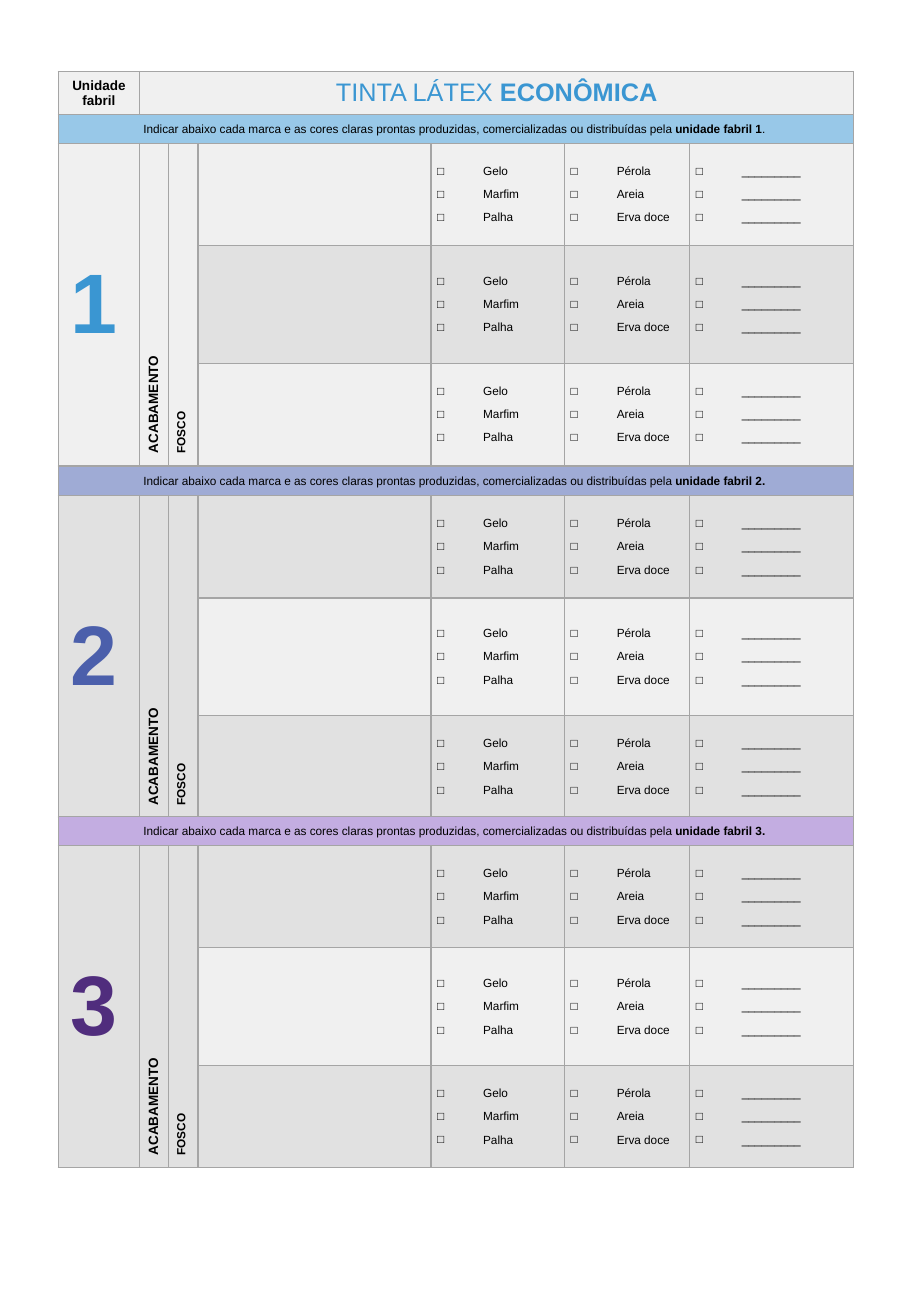
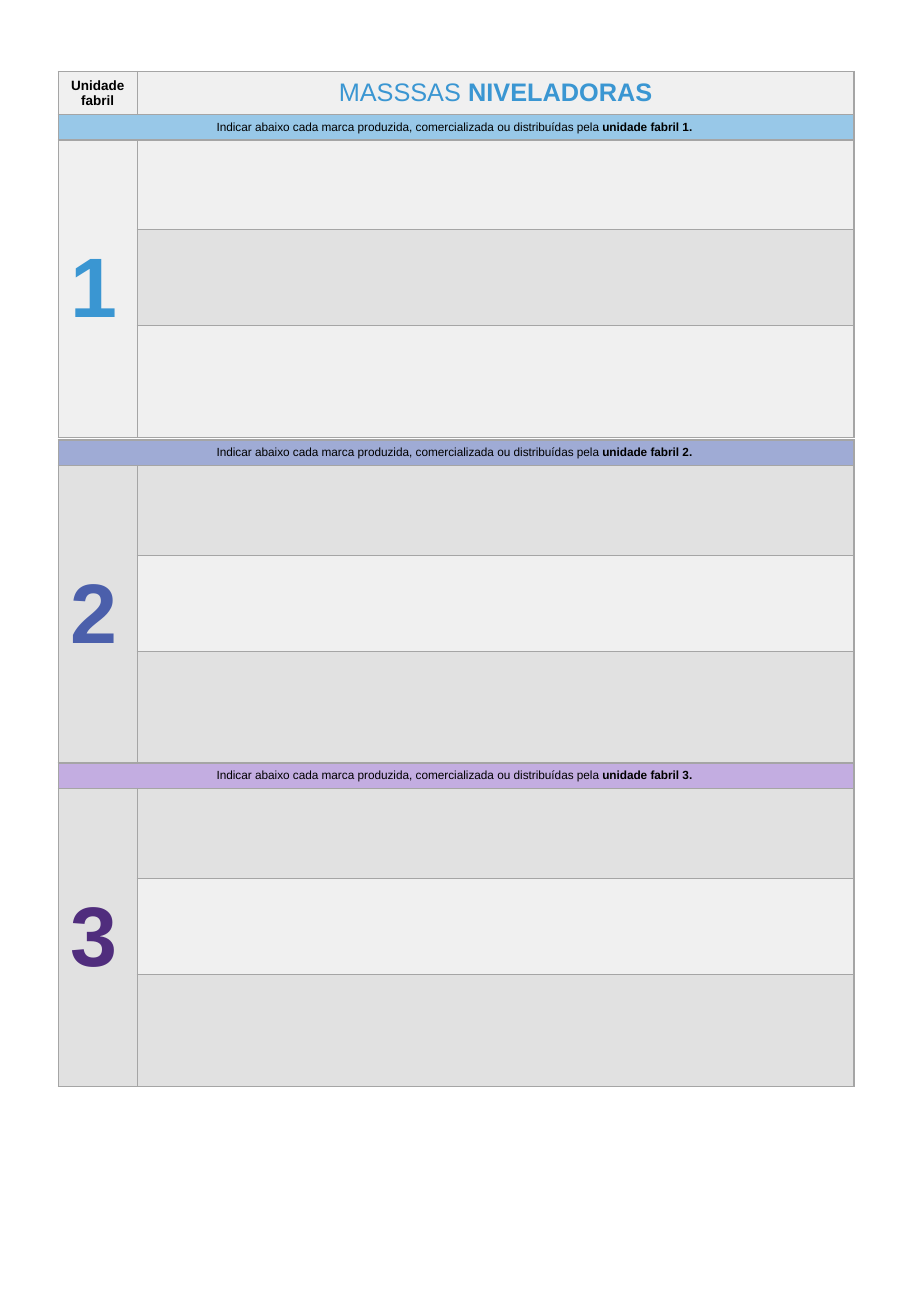
from lxml import etree
from pptx import Presentation
from pptx.dml.color import RGBColor
from pptx.enum.text import MSO_ANCHOR, PP_ALIGN
from pptx.oxml import parse_xml
from pptx.oxml.ns import nsdecls, qn
from pptx.util import Inches, Pt

MIDDLE, CENTER, LEFT = MSO_ANCHOR.MIDDLE, PP_ALIGN.CENTER, PP_ALIGN.LEFT

# Content
ASK_PAINT = ("Indicar abaixo cada marca e as cores claras prontas produzidas, "
             "comercializadas ou distribuídas pela ")
ASK_PUTTY = "Indicar abaixo cada marca produzida, comercializada ou distribuídas pela "
CORNER = "Unidade fabril"
SIDES = [("ACABAMENTO", "label"), ("FOSCO", "small")]
CHECKS = [("Gelo", "Marfim", "Palha"),
          ("Pérola", "Areia", "Erva doce"),
          ("_________",) * 3]

SHEETS = [
    {"title": ("TINTA LÁTEX ", "ECONÔMICA"), "ask": ASK_PAINT,
     "ends": [("unidade fabril 1", ". "), ("unidade fabril 2. ", ""),
              ("unidade fabril 3. ", "")],
     "sides": SIDES, "checks": CHECKS,
     "cols": [0.67, 0.23, 0.23, 1.92, 1.1, 1.03, 1.35],
     "head": 0.34, "rows": [0.24, 0.84, 0.97, 0.84], "tops": [0.59, 3.84, 6.72]},
    {"title": ("MASSSAS ", "NIVELADORAS"), "ask": ASK_PUTTY,
     "ends": [(f"unidade fabril {n}. ", "") for n in (1, 2, 3)],
     "sides": [], "checks": [], "cols": [0.65, 5.9],
     "head": 0.35, "rows": [0.21, 0.74, 0.79, 0.92], "tops": [0.59, 3.62, 6.28]},
]

# Theme
THEME = {
    "font": "Arial", "ink": "000000", "line": "A5A5A5", "edge": 1,
    "light": "F0F0F0", "dark": "E1E1E1",
    "size": {"title": 15, "label": 8, "small": 7, "number": 50},
    "units": [("98C8E8", "3A96D2"), ("9FABD5", "4B5FAB"), ("C3ADE1", "502D7D")],
}
TITLE_INK = THEME["units"][0][1]
LEFT_EDGE = 0.48


def write(par, text, size, bold=True, ink=THEME["ink"]):
    run = par.add_run()
    run.text = text
    look = {"name": THEME["font"], "size": Pt(THEME["size"][size]), "bold": bold}
    for key, value in look.items():
        setattr(run.font, key, value)
    run.font.color.rgb = RGBColor.from_string(ink)


def paint(cell, fill):
    """Give the cell its borders, fill and anchor."""
    props = cell._tc.get_or_add_tcPr()
    for side in ("lnL", "lnR", "lnT", "lnB"):
        props.append(parse_xml(
            f'<a:{side} {nsdecls("a")} w="{Pt(THEME["edge"])}"><a:solidFill>'
            f'<a:srgbClr val="{THEME["line"]}"/></a:solidFill></a:{side}>'))
    cell.fill.solid()
    cell.fill.fore_color.rgb = RGBColor.from_string(fill)
    cell.vertical_anchor = MIDDLE


def phrase(cell, parts, align=CENTER):
    par = cell.text_frame.paragraphs[0]
    par.alignment = align
    for part in parts:
        write(par, *part)


def tick(cell, names):
    """Fill the cell with a list of check boxes."""
    margins = {"margin_left": 0.05, "margin_right": 0.05,
               "margin_top": 0, "margin_bottom": 0}
    for key, value in margins.items():
        setattr(cell, key, Inches(value))
    frame = cell.text_frame
    for i, name in enumerate(names):
        par = frame.paragraphs[0] if i == 0 else frame.add_paragraph()
        props = par._p.get_or_add_pPr()
        props.set("marL", str(Inches(0.38)))
        props.set("indent", str(-Inches(0.38)))
        etree.SubElement(props, qn("a:buFont")).set("typeface", THEME["font"])
        etree.SubElement(props, qn("a:buChar")).set("char", "□")
        tabs = etree.SubElement(props, qn("a:tabLst"))
        for stop in (0.2, 0.49):
            tab = etree.SubElement(tabs, qn("a:tab"))
            tab.set("pos", str(Inches(stop)))
            tab.set("algn", "l")
        par.space_after = Pt(6)
        write(par, name, "small", False)


def build(slide, sheet, unit):
    """Add the table of one factory unit."""
    cols, sides = sheet["cols"], sheet["sides"]
    first = unit == 0
    rows = [sheet["head"]] * first + sheet["rows"]
    grid = slide.shapes.add_table(
        len(rows), len(cols), Inches(LEFT_EDGE), Inches(sheet["tops"][unit]),
        Inches(sum(cols)), Inches(sum(rows))).table
    grid.first_row = grid.horz_banding = False
    for col, wide in zip(grid.columns, cols):
        col.width = Inches(wide)
    for row, high in zip(grid.rows, rows):
        row.height = Inches(high)

    # Fills: the three entry rows alternate
    band, ink = THEME["units"][unit]
    tones = [THEME["light"], THEME["dark"]]
    if not first:
        tones.reverse()
    top, last = int(first), len(cols) - 1
    body, end = top + 1, len(rows) - 1
    fixed = 1 + len(sides)
    for r in range(len(rows)):
        for c in range(len(cols)):
            if r < top:
                fill = THEME["light"]
            elif r == top:
                fill = band
            else:
                fill = tones[0 if c < fixed else (r - body) % 2]
            paint(grid.cell(r, c), fill)

    # Title row
    if first:
        phrase(grid.cell(0, 0), [(CORNER, "label")])
        plain, strong = sheet["title"]
        phrase(grid.cell(0, 1), [(plain, "title", False, TITLE_INK),
                                 (strong, "title", True, TITLE_INK)])
        if last > 1:
            grid.cell(0, 1).merge(grid.cell(0, last))

    # Instruction band
    strong, tail = sheet["ends"][unit]
    parts = [(sheet["ask"], "small", False), (strong, "small")]
    if tail:
        parts.append((tail, "small", False))
    phrase(grid.cell(top, 0), parts)
    grid.cell(top, 0).merge(grid.cell(top, last))

    # Unit number and upright labels
    phrase(grid.cell(body, 0), [(str(unit + 1), "number", True, ink)], LEFT)
    for c, side in enumerate(sides, 1):
        cell = grid.cell(body, c)
        cell._tc.get_or_add_tcPr().set("vert", "vert270")
        phrase(cell, [side], LEFT)
    for c in range(fixed):
        grid.cell(body, c).merge(grid.cell(end, c))

    # Check boxes
    for r in range(body, end + 1):
        for c, names in enumerate(sheet["checks"], fixed + 1):
            tick(grid.cell(r, c), names)


def main():
    deck = Presentation()
    deck.slide_width, deck.slide_height = Inches(7.5), Inches(10.83)
    for sheet in SHEETS:
        slide = deck.slides.add_slide(deck.slide_layouts[6])
        for unit in range(len(THEME["units"])):
            build(slide, sheet, unit)
    deck.save("out.pptx")


if __name__ == "__main__":
    main()
